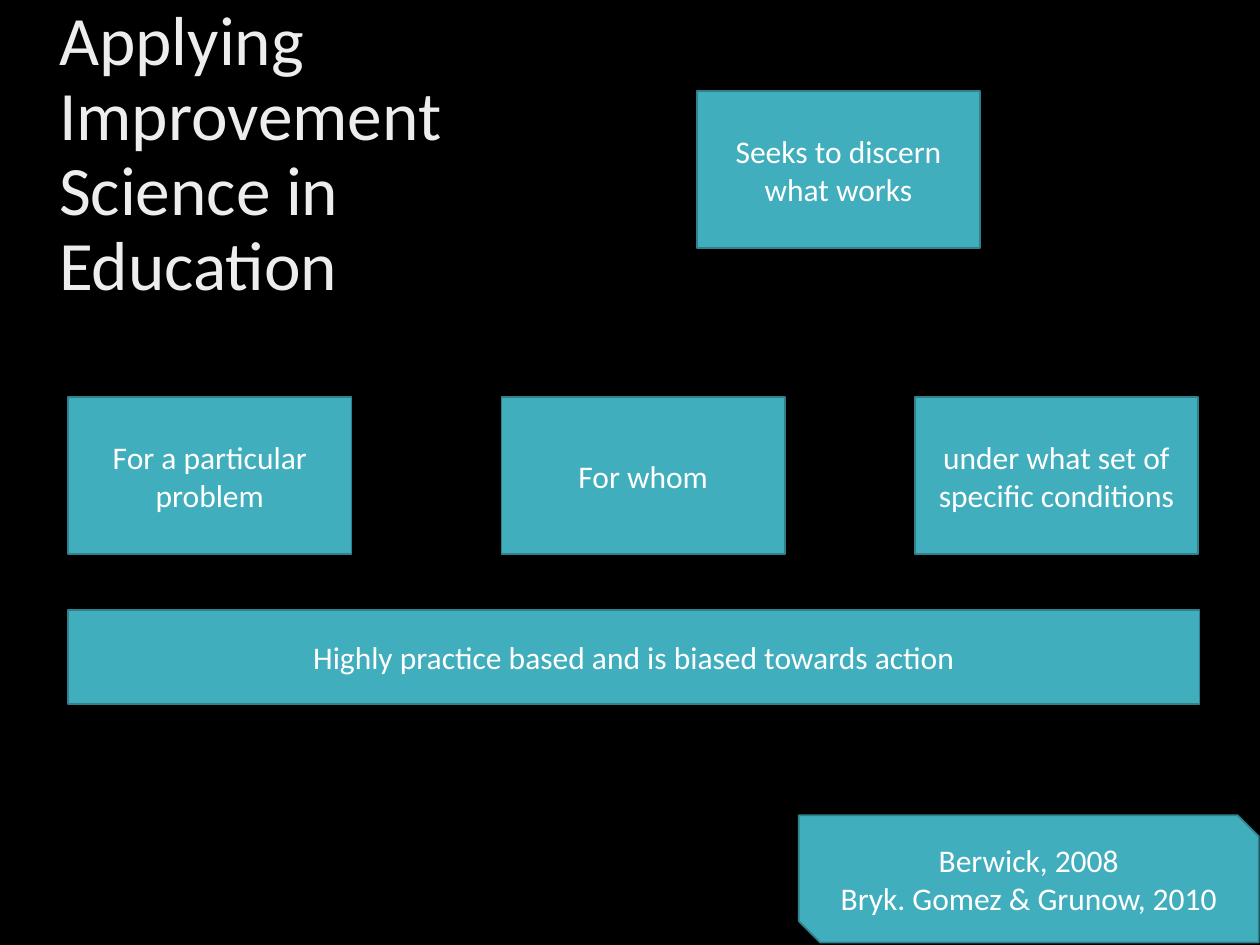
"""Build the slide on applying improvement science in education."""
from dataclasses import dataclass

from pptx import Presentation
from pptx.dml.color import RGBColor
from pptx.enum.shapes import MSO_SHAPE as Preset
from pptx.enum.text import MSO_ANCHOR as Anchor, PP_ALIGN as Align
from pptx.slide import Slide
from pptx.text.text import TextFrame
from pptx.util import Inches, Pt

BLACK = RGBColor(0x00, 0x00, 0x00)
WHITE = RGBColor(0xFF, 0xFF, 0xFF)
PALE_GREY = RGBColor(0xED, 0xED, 0xED)
TEAL = RGBColor(0x41, 0xAE, 0xBD)
DARK_TEAL = RGBColor(0x30, 0x81, 0x8C)

TITLE_FONT = {"name": "Calibri", "size": Pt(39.6)}
BOX_FONT = {"name": "Calibri", "size": Pt(18)}


@dataclass(frozen=True)
class Box:
    text: str
    left: float
    top: float
    width: float = 2.25
    height: float = 1.25
    inset: float = 0.1
    preset: Preset = Preset.RECTANGLE


BOXES = (
    Box("For whom", 3.98, 3.15),
    Box("For a particular problem", 0.54, 3.15),
    Box("Seeks to discern what works", 5.53, 0.72, inset=0.2),
    Box("under what set of specific conditions", 7.26, 3.15),
    Box("Berwick, 2008\nBryk. Gomez & Grunow, 2010", 6.34, 6.47, 3.65, 1.01,
        0.2, Preset.SNIP_2_DIAG_RECTANGLE),
    Box("Highly practice based and is biased towards action",
        0.54, 4.84, 8.98, 0.75, 0.2),
)


def write_text(frame: TextFrame, text: str, font_values: dict,
               color: RGBColor, align: Align) -> None:
    frame.word_wrap = True
    frame.vertical_anchor = Anchor.MIDDLE
    frame.text = text
    for paragraph in frame.paragraphs:
        paragraph.alignment = align
        for run in paragraph.runs:
            for name, value in font_values.items():
                setattr(run.font, name, value)
            run.font.color.rgb = color


def draw_title(slide: Slide) -> None:
    title = slide.shapes.add_textbox(
        Inches(0.37), Inches(0.51), Inches(3.72), Inches(1.45))
    write_text(title.text_frame, "Applying Improvement Science in \vEducation",
               TITLE_FONT, PALE_GREY, Align.LEFT)
    title.text_frame.paragraphs[0].line_spacing = 0.9


def draw_box(slide: Slide, box: Box) -> None:
    shape = slide.shapes.add_shape(
        box.preset, Inches(box.left), Inches(box.top),
        Inches(box.width), Inches(box.height))
    shape.shadow.inherit = False
    shape.fill.solid()
    shape.fill.fore_color.rgb = TEAL
    shape.line.color.rgb = DARK_TEAL
    shape.line.width = Pt(1)
    for side in ("left", "top", "right", "bottom"):
        inset = box.inset if side in ("left", "right") else box.inset / 2
        if box.inset == 0.2:
            inset = box.inset
        setattr(shape.text_frame, f"margin_{side}", Inches(inset))
    write_text(shape.text_frame, box.text, BOX_FONT, WHITE, Align.CENTER)


def main() -> None:
    presentation = Presentation()
    presentation.slide_width = Inches(10)
    presentation.slide_height = Inches(7.5)
    slide = presentation.slides.add_slide(presentation.slide_layouts[6])
    slide.background.fill.solid()
    slide.background.fill.fore_color.rgb = BLACK
    draw_title(slide)
    for box in BOXES:
        draw_box(slide, box)
    presentation.save("out.pptx")


if __name__ == "__main__":
    main()
